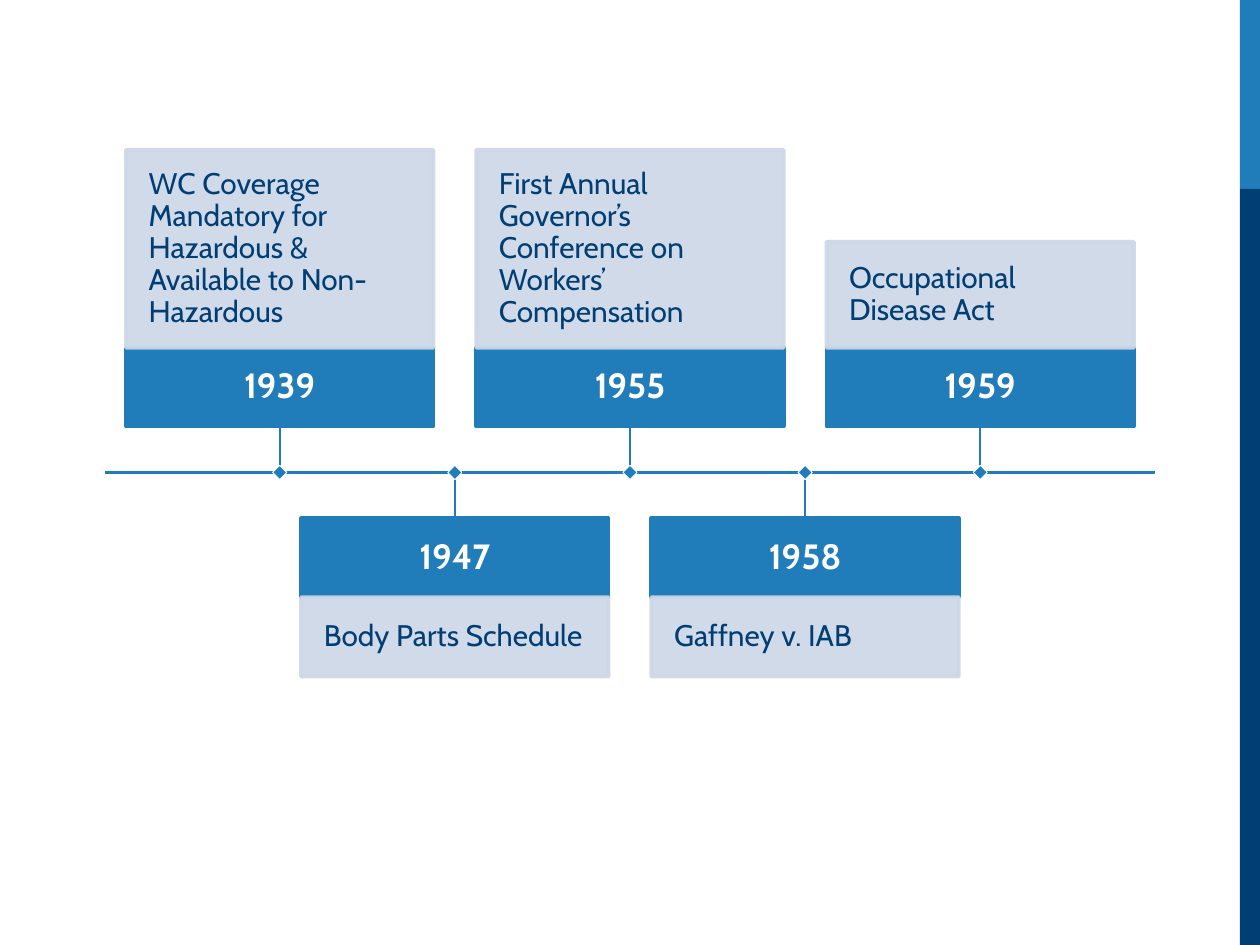
"""Build a timeline slide of workers' compensation milestones."""

from lxml import etree
from pptx import Presentation
from pptx.dml.color import RGBColor
from pptx.enum.shapes import MSO_CONNECTOR, MSO_SHAPE
from pptx.enum.text import MSO_ANCHOR, PP_ALIGN
from pptx.oxml.ns import qn
from pptx.util import Inches, Pt

RECTANGLE = MSO_SHAPE.RECTANGLE
STRAIGHT = MSO_CONNECTOR.STRAIGHT
MIDDLE = MSO_ANCHOR.MIDDLE
CENTER, LEFT = PP_ALIGN.CENTER, PP_ALIGN.LEFT

FONT = "Cabin"
BLUE, NAVY, PALE, WHITE = "217CBA", "003E74", "CDD7E7", "FFFFFF"

MILESTONES = [
    ("1939", "WC Coverage Mandatory for Hazardous & Available to Non-Hazardous", 1.57),
    ("1947", "Body Parts Schedule", 0.63),
    ("1955", "First Annual Governor’s Conference on Workers’ Compensation", 1.57),
    ("1958", "Gaffney v. IAB", 0.63),
    ("1959", "Occupational Disease Act", 0.84),
]
SIDEBAR = [(0, 1.5, BLUE), (1.5, 6, NAVY)]

AXIS_LEFT, AXIS_RIGHT, AXIS_Y = 0.83, 9.17, 3.75
FIRST_CENTER, STEP = 2.22, 1.39
BOX_WIDTH, YEAR_HEIGHT, STEM = 2.44, 0.625, 0.365
MARKER = 0.08


def rgb(value):
    return RGBColor.from_string(value)


def add_box(slide, left, top, width, height, fill, line=None, line_width=2.25):
    shape = slide.shapes.add_shape(
        RECTANGLE, Inches(left), Inches(top), Inches(width), Inches(height)
    )
    shape.shadow.inherit = False
    shape.fill.solid()
    shape.fill.fore_color.rgb = rgb(fill)
    if line:
        shape.line.color.rgb = rgb(line)
        shape.line.width = Pt(line_width)
    else:
        shape.line.fill.background()
    return shape


def set_opacity(shape, percent):
    for color in shape._element.spPr.iter(qn("a:srgbClr")):
        etree.SubElement(color, qn("a:alpha"), val=str(percent * 1000))


def write(shape, text, size, color, margin, alignment, bold=False):
    frame = shape.text_frame
    frame.word_wrap = True
    frame.vertical_anchor = MIDDLE
    frame.margin_left = frame.margin_right = Inches(margin)
    frame.margin_top = frame.margin_bottom = Inches(margin)
    paragraph = frame.paragraphs[0]
    paragraph.alignment = alignment
    paragraph.line_spacing = 0.9
    run = paragraph.add_run()
    run.text = text
    run.font.name = FONT
    run.font.size = Pt(size)
    run.font.bold = bold
    run.font.color.rgb = rgb(color)


def add_line(slide, start, end, width):
    points = [Inches(value) for value in (*start, *end)]
    connector = slide.shapes.add_connector(STRAIGHT, *points)
    connector.line.color.rgb = rgb(BLUE)
    connector.line.width = Pt(width)
    etree.SubElement(connector._element.spPr, qn("a:effectLst"))
    return connector


def add_milestone(slide, index, year, event, event_height):
    center = FIRST_CENTER + index * STEP
    left = center - BOX_WIDTH / 2
    above = index % 2 == 0
    if above:
        stem_y = AXIS_Y - STEM
        year_top = stem_y - YEAR_HEIGHT
        event_top = year_top - event_height
    else:
        stem_y = year_top = AXIS_Y + STEM
        event_top = year_top + YEAR_HEIGHT

    year_box = add_box(slide, left, year_top, BOX_WIDTH, YEAR_HEIGHT, BLUE, BLUE)
    write(year_box, year, 20, WHITE, 0.11, CENTER, bold=True)
    event_box = add_box(slide, left, event_top, BOX_WIDTH, event_height, PALE, PALE)
    set_opacity(event_box, 90)
    write(event_box, event, 17, NAVY, 0.18, LEFT)

    stem = add_line(slide, (center, stem_y), (center, AXIS_Y), 1)
    stem.begin_connect(year_box, 2 if above else 0)
    marker = add_box(
        slide, center - MARKER / 2, AXIS_Y - MARKER / 2, MARKER, MARKER, BLUE, WHITE, 0.5
    )
    marker.rotation = 45


def main():
    presentation = Presentation()
    presentation.slide_width, presentation.slide_height = Inches(10), Inches(7.5)
    slide = presentation.slides.add_slide(presentation.slide_layouts[6])
    for top, height, color in SIDEBAR:
        add_box(slide, 9.84, top, 0.16, height, color)
    add_line(slide, (AXIS_LEFT, AXIS_Y), (AXIS_RIGHT, AXIS_Y), 2.25)
    for index, milestone in enumerate(MILESTONES):
        add_milestone(slide, index, *milestone)
    presentation.save("out.pptx")


if __name__ == "__main__":
    main()
